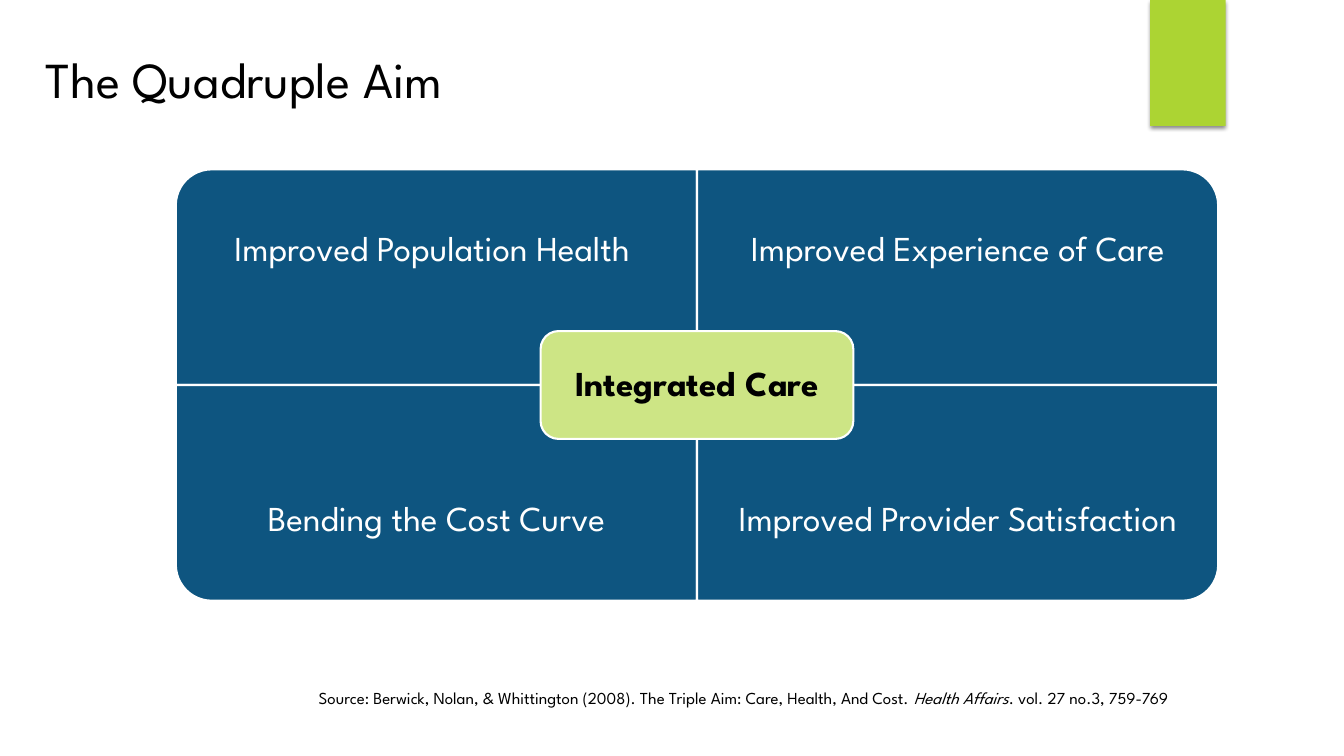
"""Build the Quadruple Aim slide."""
from dataclasses import dataclass

from lxml import etree
from pptx import Presentation, util as u
from pptx.dml.color import RGBColor
from pptx.enum import shapes, text
from pptx.oxml import ns

FONT = "League Spartan"
COLORS = {"tab": "ACD433", "quadrant": "0E5580", "centre": "CDE585",
          "white": "FFFFFF", "black": "000000"}
SLIDE_W, SLIDE_H = u.Inches(13.33), u.Inches(7.5)


@dataclass(frozen=True)
class Box:
    """Rectangle in percent of the slide's width and height."""
    left: float
    top: float
    width: float
    height: float

    def emu(self) -> tuple[int, int, int, int]:
        """Return left, top, width and height as lengths."""
        return (int(SLIDE_W * self.left / 100), int(SLIDE_H * self.top / 100),
                int(SLIDE_W * self.width / 100), int(SLIDE_H * self.height / 100))


@dataclass(frozen=True)
class Quadrant:
    """One aim with its grid cell and the turn of its rounded corner."""
    label: str
    col: int
    row: int
    rotation: int


TITLE = Box(2.63, 5.2, 71.85, 10.27)
TAB = Box(85.58, 0, 5.62, 16.67)
SOURCE = Box(22.95, 90.27, 64.73, 6.67)
CELL = Box(13.08, 22.4, 38.78, 28.53)
LABEL_SHARE = 0.75
CENTRE_W, CENTRE_H = 0.6, 0.5
QUADRANTS = [
    Quadrant("Improved Population Health ", 0, 0, 270),
    Quadrant("Improved Experience of Care", 1, 0, 0),
    Quadrant("Bending the Cost Curve", 0, 1, 180),
    Quadrant("Improved Provider Satisfaction", 1, 1, 90),
]


def rgb(name: str) -> RGBColor:
    """Look up a colour by name."""
    return RGBColor.from_string(COLORS[name])


def style_font(p, size: float, color: str, bold: bool = False) -> None:
    """Set the font of a paragraph."""
    p.font.name, p.font.size, p.font.bold = FONT, u.Pt(size), bold
    p.font.color.rgb = rgb(color)


def add_panel(s, kind, lengths: tuple[int, int, int, int], fill: str, outlined: bool = True):
    """Add a filled shape, with a white outline if asked for."""
    sp = s.shapes.add_shape(kind, *lengths)
    sp.shadow.inherit = False
    sp.fill.solid()
    sp.fill.fore_color.rgb = rgb(fill)
    if outlined:
        sp.line.color.rgb = rgb("white")
        sp.line.width = u.Pt(1.5)
    else:
        sp.line.fill.background()
    return sp


def write_label(sp, label: str, color: str, inset: float, bold: bool = False) -> None:
    """Write a centred label into a shape or text box."""
    tf = sp.text_frame
    tf.word_wrap = True
    tf.vertical_anchor = text.MSO_ANCHOR.MIDDLE
    tf.margin_left = tf.margin_right = tf.margin_top = tf.margin_bottom = u.Inches(inset)
    p = tf.paragraphs[0]
    p.text = label
    p.alignment = text.PP_ALIGN.CENTER
    p.line_spacing = 0.9
    style_font(p, 25, color, bold)


def add_tab(s) -> None:
    """Add the green tab with its soft shadow."""
    sp = add_panel(s, shapes.MSO_SHAPE.RECTANGLE, TAB.emu(), "tab", outlined=False)
    effects = sp._element.spPr.find(ns.qn("a:effectLst"))
    shadow = etree.SubElement(effects, ns.qn("a:outerShdw"), blurRad=str(u.Pt(3)),
                              dist=str(u.Pt(2)), dir="5400000", rotWithShape="0")
    color = etree.SubElement(shadow, ns.qn("a:srgbClr"), val=COLORS["black"])
    etree.SubElement(color, ns.qn("a:alpha"), val="45000")


def add_title(s) -> None:
    """Place and format the title."""
    sp = s.shapes.title
    sp.left, sp.top, sp.width, sp.height = TITLE.emu()
    tf = sp.text_frame
    tf.auto_size = text.MSO_AUTO_SIZE.NONE
    tf.vertical_anchor = text.MSO_ANCHOR.MIDDLE
    p = tf.paragraphs[0]
    p.text = "The Quadruple Aim"
    p.alignment = text.PP_ALIGN.LEFT
    style_font(p, 36, "black")


def add_quadrant(s, quadrant: Quadrant) -> None:
    """Add one quadrant and its label on the outer part of the cell."""
    left, top, width, height = CELL.emu()
    left += quadrant.col * width
    top += quadrant.row * height
    w, h = (height, width) if quadrant.rotation % 180 else (width, height)
    sp = add_panel(s, shapes.MSO_SHAPE.ROUND_1_RECTANGLE,
                   (left + (width - w) // 2, top + (height - h) // 2, w, h), "quadrant")
    sp.rotation = quadrant.rotation
    label_h = int(height * LABEL_SHARE)
    label_top = top + quadrant.row * (height - label_h)
    label = s.shapes.add_textbox(left, label_top, width, label_h)
    write_label(label, quadrant.label, "white", 0.19)


def add_centre(s) -> None:
    """Add the tile where the four quadrants meet."""
    left, top, width, height = CELL.emu()
    w, h = int(width * CENTRE_W), int(height * CENTRE_H)
    sp = add_panel(s, shapes.MSO_SHAPE.ROUNDED_RECTANGLE,
                   (left + width - w // 2, top + height - h // 2, w, h), "centre")
    write_label(sp, "Integrated Care", "black", 0.1, bold=True)


def add_source(s) -> None:
    """Add the citation with its journal in italics."""
    tf = s.shapes.add_textbox(*SOURCE.emu()).text_frame
    tf.word_wrap = True
    tf.auto_size = text.MSO_AUTO_SIZE.SHAPE_TO_FIT_TEXT
    p = tf.paragraphs[0]
    p.alignment = text.PP_ALIGN.RIGHT
    style_font(p, 12, "black")
    for words, italic in (
        ("Source: Berwick, Nolan, & Whittington (2008). "
         "The Triple Aim: Care, Health, And Cost. ", False),
        ("Health Affairs", True),
        (". vol. 27 no.3, 759-769", False),
    ):
        r = p.add_run()
        r.text = words
        r.font.italic = italic


def main() -> None:
    """Build and save the presentation."""
    prs = Presentation()
    prs.slide_width, prs.slide_height = SLIDE_W, SLIDE_H
    s = prs.slides.add_slide(prs.slide_layouts.get_by_name("Title Only"))
    add_tab(s)
    add_title(s)
    for quadrant in QUADRANTS:
        add_quadrant(s, quadrant)
    add_centre(s)
    add_source(s)
    prs.save("out.pptx")


if __name__ == "__main__":
    main()
